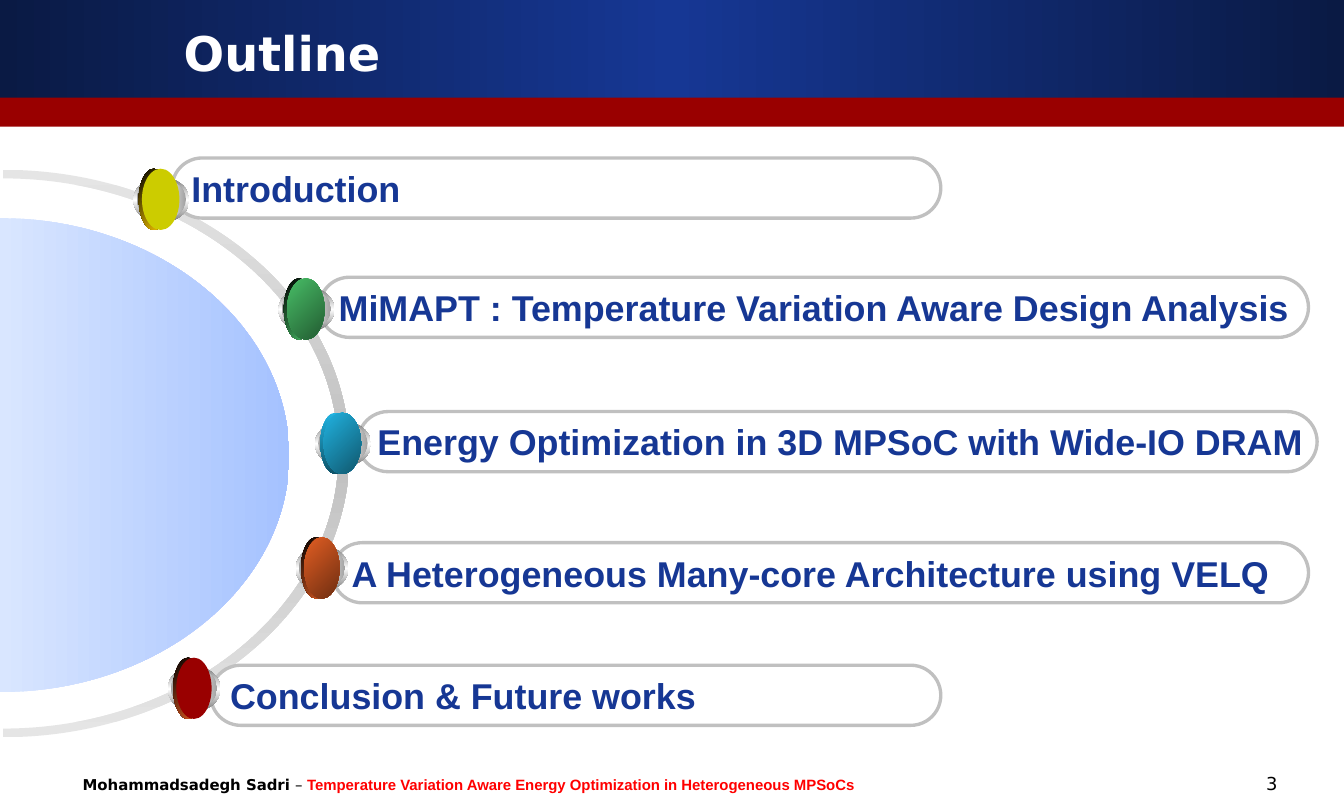
import pptx
import pptx.dml.color
import pptx.enum.shapes
import pptx.enum.text
import pptx.util
from lxml import etree
from pptx.oxml.ns import qn

Inches = pptx.util.Inches
Pt = pptx.util.Pt
RGBColor = pptx.dml.color.RGBColor
MSO_SHAPE = pptx.enum.shapes.MSO_SHAPE
MSO_ANCHOR = pptx.enum.text.MSO_ANCHOR
PP_ALIGN = pptx.enum.text.PP_ALIGN

BLACK = RGBColor(0x00, 0x00, 0x00)
WHITE = RGBColor(0xFF, 0xFF, 0xFF)
RED = RGBColor(0xFF, 0x00, 0x00)
DARK_RED = RGBColor(0x99, 0x00, 0x00)
NAVY = RGBColor(0x0A, 0x1A, 0x44)
BLUE = RGBColor(0x16, 0x37, 0x94)
PALE_BLUE = RGBColor(0xD9, 0xE6, 0xFF)
SKY_BLUE = RGBColor(0xA5, 0xC2, 0xFF)
SILVER = RGBColor(0xC0, 0xC0, 0xC0)
LIGHT_GRAY = RGBColor(0xE5, 0xE5, 0xE5)
RING_GRAY = RGBColor(0x76, 0x76, 0x76)
INNER_GRAY = RGBColor(0xA2, 0xA2, 0xA2)
GOLD = RGBColor(0xFF, 0xCC, 0x00)
YELLOW = RGBColor(0xCC, 0xCC, 0x00)
GREEN = RGBColor(0x48, 0xBE, 0x67)
DARK_GREEN = RGBColor(0x23, 0x5C, 0x32)
CYAN = RGBColor(0x21, 0xB3, 0xE1)
DEEP_CYAN = RGBColor(0x0F, 0x53, 0x68)
DARK_CYAN = RGBColor(0x10, 0x57, 0x6D)
ORANGE = RGBColor(0xE3, 0x5E, 0x23)
BROWN = RGBColor(0x6E, 0x2E, 0x11)
ROUNDNESS = 0.55


def paint(shape, colors, angle=0):
    """Fill without outline: one colour is solid, more are evenly spaced gradient stops."""
    shape.shadow.inherit = False
    shape.line.fill.background()
    if len(colors) == 1:
        shape.fill.solid()
        shape.fill.fore_color.rgb = colors[0]
        return
    shape.fill.gradient()
    gradient = shape.element.spPr.find(qn("a:gradFill"))
    stops = gradient.find(qn("a:gsLst"))
    for stop in list(stops):
        stops.remove(stop)
    for index, color in enumerate(colors):
        position = str(100000 * index // (len(colors) - 1))
        stop = etree.SubElement(stops, qn("a:gs"), pos=position)
        etree.SubElement(stop, qn("a:srgbClr"), val=str(color))
    direction = gradient.find(qn("a:lin"))
    direction.set("ang", str(angle * 60000))
    direction.set("scaled", "0")


def round_segments(shape):
    """Turn each slanted segment of a freeform into a quarter ellipse bulging to the right."""
    outline = shape.element.spPr.find(".//" + qn("a:path"))
    start = None
    for segment in list(outline):
        point = segment.find(qn("a:pt"))
        if point is None:
            continue
        end = (int(point.get("x")), int(point.get("y")))
        if segment.tag == qn("a:lnTo") and start[0] != end[0]:
            corner = (max(start[0], end[0]), min(start, end)[1])
            segment.tag = qn("a:cubicBezTo")
            for index, anchor in enumerate((start, end)):
                x, y = (round(a + ROUNDNESS * (c - a)) for a, c in zip(anchor, corner))
                control = etree.Element(qn("a:pt"), x=str(x), y=str(y))
                segment.insert(index, control)
        start = end


presentation = pptx.Presentation()
presentation.slide_width = Inches(12.5)
presentation.slide_height = Inches(7.5)
slide = presentation.slides.add_slide(presentation.slide_layouts[6])
shapes = slide.shapes

# Header bands
for top, height, colors in [(0, 0.91, [NAVY, BLUE, NAVY]), (0.91, 0.27, [DARK_RED])]:
    band = shapes.add_shape(MSO_SHAPE.RECTANGLE, 0, Inches(top), Inches(12.5), Inches(height))
    paint(band, colors)

# Title, footer and slide number
texts = [
    (1.61, 0.18, 9.27, 0.62, 32, PP_ALIGN.LEFT, MSO_ANCHOR.MIDDLE,
     [("Outline", "DejaVu Sans", WHITE, True)]),
    (0.67, 7.17, 10.19, 0.44, 10, PP_ALIGN.LEFT, MSO_ANCHOR.TOP,
     [("Mohammadsadegh Sadri ", "DejaVu Sans", BLACK, True),
      ("– ", "DejaVu Sans", BLACK, False),
      ("Temperature Variation Aware Energy Optimization in Heterogeneous MPSoCs",
       "Arial", RED, True)]),
    (10.68, 7.14, 1.3, 0.28, 12, PP_ALIGN.RIGHT, MSO_ANCHOR.TOP,
     [("3", "DejaVu Sans", BLACK, False)]),
]
for left, top, width, height, size, alignment, anchor, runs in texts:
    box = shapes.add_textbox(Inches(left), Inches(top), Inches(width), Inches(height))
    box.text_frame.word_wrap = True
    box.text_frame.vertical_anchor = anchor
    paragraph = box.text_frame.paragraphs[0]
    paragraph.alignment = alignment
    paragraph.font.size = Pt(size)
    for text, font_name, color, bold in runs:
        run = paragraph.add_run()
        run.text = text
        run.font.name = font_name
        run.font.color.rgb = color
        run.font.bold = bold

# Arc and dome on the left
arc = [(0.03, 1.58), (3.25, 4.22), (0.03, 6.86), (0.03, 6.78), (3.15, 4.22), (0.03, 1.66)]
dome = [(0, 2.03), (2.69, 4.24), (0, 6.44)]
for corners, colors, angle in [(arc, [LIGHT_GRAY, SILVER, LIGHT_GRAY], 90),
                               (dome, [PALE_BLUE, SKY_BLUE], 0)]:
    points = [(Inches(x), Inches(y)) for x, y in corners]
    builder = shapes.build_freeform(*points[0])
    builder.add_line_segments(points[1:], close=True)
    curve = builder.convert_to_shape()
    round_segments(curve)
    paint(curve, colors, angle)

# Topics: text, bar (left, top, width), bead (left, top, width), edge colours and angle, face
topics = [
    ("Introduction", (1.6, 1.47, 7.15), (1.24, 1.65, 0.52),
     [BLACK, GOLD], 45, [YELLOW]),
    ("MiMAPT : Temperature Variation Aware Design Analysis", (2.97, 2.58, 9.2),
     (2.59, 2.67, 0.52), [BLACK, GREEN], 45, [GREEN, DARK_GREEN]),
    ("Energy Optimization in 3D MPSoC with Wide-IO DRAM", (3.33, 3.83, 8.92),
     (2.93, 3.92, 0.52), [CYAN, DEEP_CYAN], 90, [CYAN, DARK_CYAN]),
    ("A Heterogeneous Many-core Architecture using VELQ", (3.09, 5.05, 9.08),
     (2.75, 5.08, 0.49), [BLACK, ORANGE], 45, [ORANGE, BROWN]),
    ("Conclusion & Future works", (1.96, 6.19, 6.79), (1.56, 6.2, 0.49),
     [BLACK, ORANGE], 45, [DARK_RED]),
]
for text, (left, top, width), bead, edge_colors, edge_angle, face_colors in topics:
    bar = shapes.add_shape(MSO_SHAPE.ROUNDED_RECTANGLE, Inches(left), Inches(top),
                           Inches(width), Inches(0.56))
    bar.adjustments[0] = 0.5
    bar.shadow.inherit = False
    bar.fill.background()
    bar.line.color.rgb = SILVER
    bar.line.width = Pt(2.25)
    bar.text_frame.word_wrap = False
    bar.text_frame.vertical_anchor = MSO_ANCHOR.MIDDLE
    paragraph = bar.text_frame.paragraphs[0]
    paragraph.text = text
    paragraph.alignment = PP_ALIGN.LEFT
    paragraph.font.name = "Arial"
    paragraph.font.size = Pt(24)
    paragraph.font.bold = True
    paragraph.font.color.rgb = BLUE

    left, top, width = bead
    layers = [
        (0, 0, width, 0.42, [RING_GRAY, WHITE, RING_GRAY], 90),
        (0.03, 0.02, width - 0.06, 0.37, [INNER_GRAY, WHITE, INNER_GRAY], 0),
        (0.05, -0.08, 0.28, 0.57, edge_colors, edge_angle),
        (0.08, -0.08, width * 0.67, 0.57, face_colors, 45),
    ]
    group = shapes.add_group_shape()
    for offset_x, offset_y, layer_width, layer_height, colors, angle in layers:
        ellipse = group.shapes.add_shape(
            MSO_SHAPE.OVAL, Inches(left + offset_x), Inches(top + offset_y),
            Inches(layer_width), Inches(layer_height))
        paint(ellipse, colors, angle)

presentation.save("out.pptx")
